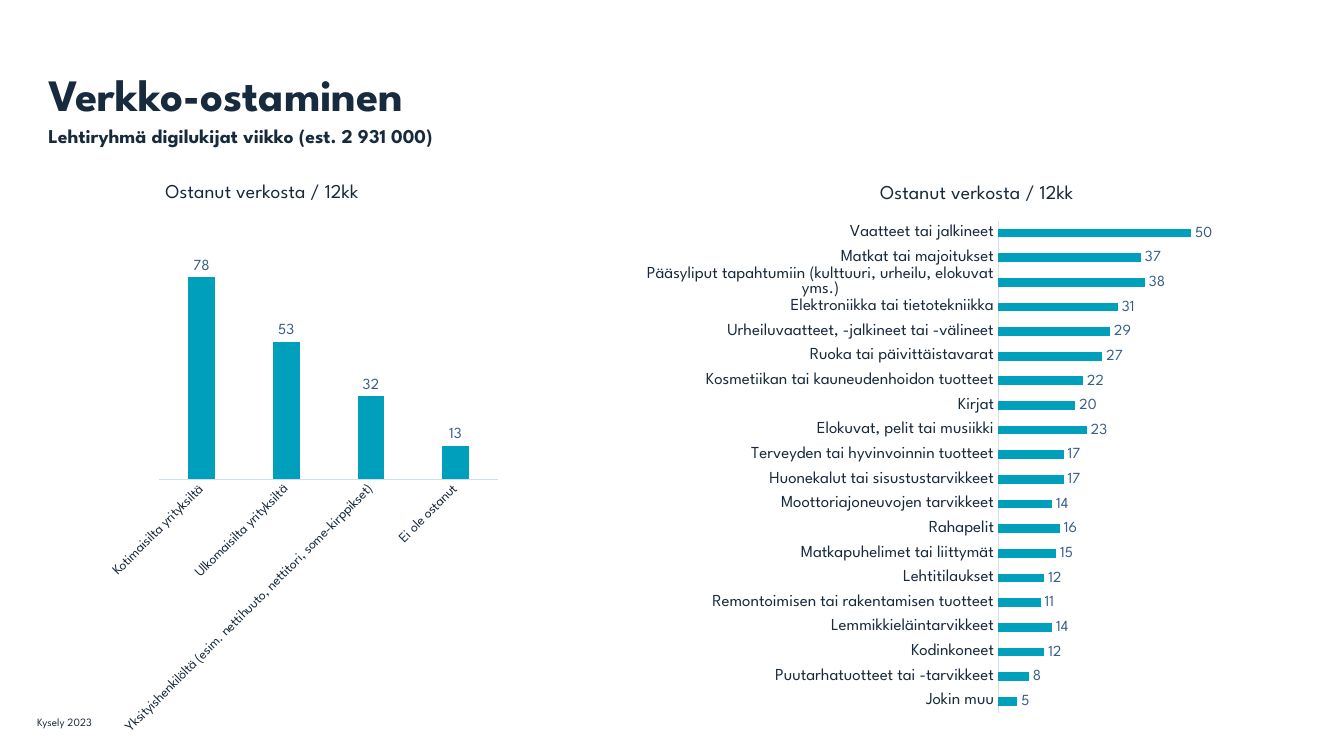
from lxml import etree
from pptx import Presentation, util as u
from pptx.chart.data import CategoryChartData
from pptx.dml.color import RGBColor
from pptx.enum import chart as ch, text
from pptx.oxml import ns

FONT = "League Spartan"
NAVY = RGBColor(0x18, 0x2A, 0x3D)
TEAL = RGBColor(0x00, 0xA0, 0xBD)
BLUE = RGBColor(0x36, 0x5E, 0x89)
PALE = RGBColor(0xD1, 0xDF, 0xED)

deck = Presentation()
deck.slide_width, deck.slide_height = u.Inches(13.33), u.Inches(7.5)
slide = deck.slides.add_slide(deck.slide_layouts[6])


def style(font, size, color=NAVY, bold=False):
    font.name, font.size, font.bold = FONT, u.Pt(size), bold
    font.color.rgb = color


def add_bars(kind, place, data, gap, size):
    """Add a one-series bar chart with a title and value labels."""
    source = CategoryChartData()
    source.categories = [name for name, _ in data]
    source.add_series("Series 1", [value for _, value in data])
    chart = slide.shapes.add_chart(kind, *map(u.Inches, place), source).chart
    style(chart.font, 10)
    chart.has_legend = False

    chart.has_title = True
    chart.chart_title.include_in_layout = False
    head = chart.chart_title.text_frame
    head.text = "Ostanut verkosta / 12kk"
    style(head.paragraphs[0].runs[0].font, 14)

    axis = chart.category_axis
    axis.major_tick_mark = axis.minor_tick_mark = ch.XL_TICK_MARK.NONE
    axis.format.line.color.rgb = PALE
    axis.format.line.width = u.Pt(0.75)
    style(axis.tick_labels.font, size)
    chart.value_axis.visible = False
    chart.value_axis.has_major_gridlines = False
    chart.value_axis.minimum_scale = 0

    plot = chart.plots[0]
    plot.gap_width, plot.vary_by_categories = gap, False
    fill = plot.series[0].format.fill
    fill.solid()
    fill.fore_color.rgb = TEAL
    labels = plot.series[0].data_labels
    labels.show_value = True
    labels.position = ch.XL_LABEL_POSITION.OUTSIDE_END
    style(labels.font, 11, BLUE)
    return chart


# Title and subtitle
box = slide.shapes.add_textbox(*map(u.Inches, (0.48, 0.5, 12.36, 0.81)))
frame = box.text_frame
frame.word_wrap = True
frame.margin_left = frame.margin_right = frame.margin_bottom = 0
frame.margin_top = u.Inches(0.16)
frame.text = "Verkko-ostaminen\nLehtiryhmä digilukijat viikko (est. 2 931 000)"
for par, size in zip(frame.paragraphs, (32, 14)):
    style(par.runs[0].font, size, bold=True)
frame.paragraphs[1].space_before = u.Pt(2.5)

# Sellers, as columns
sellers = [
    ("Kotimaisilta yrityksiltä", 78),
    ("Ulkomaisilta yrityksiltä", 53),
    ("Yksityishenkilöltä (esim. nettihuuto, nettitori, some-kirppikset)", 32),
    ("Ei ole ostanut", 13),
]
cols = add_bars(ch.XL_CHART_TYPE.COLUMN_CLUSTERED, (0.09, 1.61, 5.02, 5.74),
                sellers, 219, 10)
cols.plots[0].overlap = -27
cols.value_axis.maximum_scale = 90

# Slanted labels and a fixed plot area
body = cols.category_axis._element.find(ns.qn("c:txPr")).find(ns.qn("a:bodyPr"))
body.set("rot", "-2700000")
body.set("vert", "horz")
area = cols._chartSpace.chart.plotArea
for old in area.findall(ns.qn("c:layout")):
    area.remove(old)
layout = etree.Element(ns.qn("c:layout"))
area.insert(0, layout)
manual = etree.SubElement(layout, ns.qn("c:manualLayout"))
for tag, val in (("layoutTarget", "inner"), ("xMode", "edge"), ("yMode", "edge"),
                 ("x", 0.297), ("y", 0.145), ("w", 0.669), ("h", 0.403)):
    etree.SubElement(manual, ns.qn("c:" + tag)).set("val", str(val))

# Products, as bars
goods = [
    ("Vaatteet tai jalkineet", 50),
    ("Matkat tai majoitukset", 37),
    ("Pääsyliput tapahtumiin (kulttuuri, urheilu, elokuvat yms.)", 38),
    ("Elektroniikka tai tietotekniikka", 31),
    ("Urheiluvaatteet, -jalkineet tai -välineet", 29),
    ("Ruoka tai päivittäistavarat", 27),
    ("Kosmetiikan tai kauneudenhoidon tuotteet", 22),
    ("Kirjat", 20),
    ("Elokuvat, pelit tai musiikki", 23),
    ("Terveyden tai hyvinvoinnin tuotteet", 17),
    ("Huonekalut tai sisustustarvikkeet", 17),
    ("Moottoriajoneuvojen tarvikkeet", 14),
    ("Rahapelit", 16),
    ("Matkapuhelimet tai liittymät", 15),
    ("Lehtitilaukset", 12),
    ("Remontoimisen tai rakentamisen tuotteet", 11),
    ("Lemmikkieläintarvikkeet", 14),
    ("Kodinkoneet", 12),
    ("Puutarhatuotteet tai -tarvikkeet", 8),
    ("Jokin muu", 5),
]
bars = add_bars(ch.XL_CHART_TYPE.BAR_CLUSTERED, (6.28, 1.62, 6.82, 5.57),
                goods, 182, 12)
bars.category_axis.reverse_order = True
bars.value_axis.maximum_scale = 80

# Source note
note = slide.shapes.add_textbox(*map(u.Inches, (0.27, 6.96, 1.05, 0.4))).text_frame
note.word_wrap = True
note.vertical_anchor = text.MSO_ANCHOR.MIDDLE
note.text = "Kysely 2023"
style(note.paragraphs[0].runs[0].font, 8)

deck.save("out.pptx")
